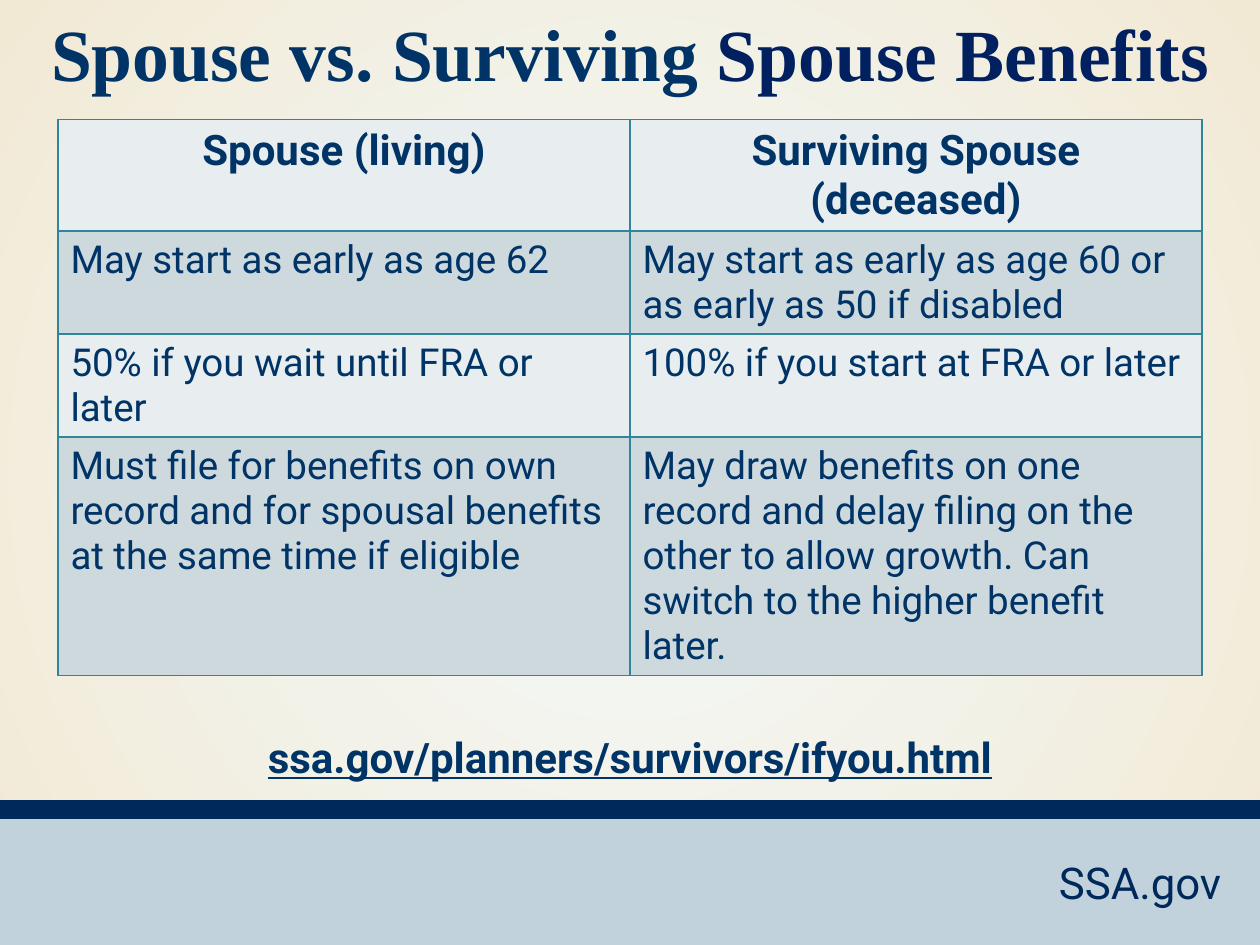
from dataclasses import dataclass

from lxml.etree import SubElement
from pptx import Presentation
from pptx.dml.color import RGBColor
from pptx.enum.shapes import MSO_SHAPE
from pptx.enum.text import MSO_ANCHOR, PP_ALIGN
from pptx.oxml.ns import qn
from pptx.util import Inches, Pt

NAVY = "00295B"
BLUE = "003366"
BORDER = "31859B"
ROW_FILLS = ("E8EDEF", "CED9DE")
HEADER_FORMAT = {"name": "Roboto", "size": Pt(24), "bold": True}
BODY_FORMAT = {"name": "Roboto", "size": Pt(22), "bold": False}
TITLE_FORMAT = {"name": "Times New Roman", "size": Pt(42), "bold": True}


@dataclass
class Box:
    left: float
    top: float
    width: float
    height: float

    def lengths(self) -> tuple:
        return tuple(Inches(value) for value in (self.left, self.top, self.width, self.height))


@dataclass
class Band:
    box: Box
    color: str


@dataclass
class Label:
    box: Box
    text: str
    color: str
    alignment: PP_ALIGN
    font_format: dict


@dataclass
class Row:
    height: float
    texts: tuple


BANDS = (
    Band(Box(0, 6.45, 10, 1.05), "C1D2DC"),
    Band(Box(0, 6.35, 10, 0.15), NAVY),
)
LABELS = (
    Label(Box(6.72, 6.74, 3.07, 0.52), "SSA.gov", NAVY, PP_ALIGN.RIGHT,
          {"name": "Roboto", "size": Pt(25)}),
    Label(Box(0, 5.76, 10, 0.5), "ssa.gov/planners/survivors/ifyou.html", BLUE, PP_ALIGN.CENTER,
          HEADER_FORMAT | {"underline": True}),
)
TITLE_RUNS = (("Spouse vs. Surviving ", BLUE), ("Spouse Benefits", "002060"))
TABLE_BOX = Box(0.46, 0.95, 9.08, 4.2)
ROWS = (
    Row(0.84, ("Spouse (living)", "Surviving Spouse (deceased)")),
    Row(0.78, ("May start as early as age 62",
               "May start as early as age 60 or as early as 50 if disabled")),
    Row(0.78, ("50% if you wait until FRA or later", "100% if you start at FRA or later")),
    Row(1.8, ("Must file for benefits on own record and for spousal benefits "
              "at the same time if eligible",
              "May draw benefits on one record and delay filing on the other to allow growth. "
              "Can switch to the higher benefit later.")),
)


def rgb(color: str) -> RGBColor:
    return RGBColor.from_string(color)


def add_run(paragraph, text: str, color: str, font_format: dict) -> None:
    run = paragraph.add_run()
    run.text = text
    run.font.color.rgb = rgb(color)
    for name, value in font_format.items():
        setattr(run.font, name, value)


def set_background(slide) -> None:
    fill = slide.background.fill
    fill.gradient()
    for stop, position, color in zip(fill.gradient_stops, (0, 1), ("F3FAFB", "F2E9D5")):
        stop.position = position
        stop.color.rgb = rgb(color)
    gradient = next(slide.background._cSld.iter(qn("a:gradFill")))
    gradient.remove(gradient.find(qn("a:lin")))
    circle = SubElement(gradient, qn("a:path"), {"path": "circle"})
    SubElement(circle, qn("a:fillToRect"), dict.fromkeys("ltrb", "50000"))


def add_band(slide, band: Band) -> None:
    shape = slide.shapes.add_shape(MSO_SHAPE.RECTANGLE, *band.box.lengths())
    shape.shadow.inherit = False
    shape.fill.solid()
    shape.fill.fore_color.rgb = rgb(band.color)
    shape.line.fill.background()


def add_label(slide, label: Label) -> None:
    frame = slide.shapes.add_textbox(*label.box.lengths()).text_frame
    frame.word_wrap = True
    paragraph = frame.paragraphs[0]
    paragraph.alignment = label.alignment
    add_run(paragraph, label.text, label.color, label.font_format)


def set_title(slide) -> None:
    title = slide.shapes.title
    title.left, title.top, title.width, title.height = Box(0, 0, 10, 0.82).lengths()
    title.text_frame.vertical_anchor = MSO_ANCHOR.MIDDLE
    paragraph = title.text_frame.paragraphs[0]
    paragraph.alignment = PP_ALIGN.CENTER
    for text, color in TITLE_RUNS:
        add_run(paragraph, text, color, TITLE_FORMAT)


def set_borders(cell) -> None:
    properties = cell._tc.get_or_add_tcPr()
    for index, side in enumerate("LRTB"):
        line = SubElement(properties, qn(f"a:ln{side}"), {"w": str(Pt(1))})
        fill = SubElement(line, qn("a:solidFill"))
        SubElement(fill, qn("a:srgbClr"), {"val": BORDER})
        properties.insert(index, line)


def add_benefits_table(slide) -> None:
    table = slide.shapes.add_table(len(ROWS), 2, *TABLE_BOX.lengths()).table
    for row_index, row in enumerate(ROWS):
        table.rows[row_index].height = Inches(row.height)
        is_header = row_index == 0
        for column_index, text in enumerate(row.texts):
            cell = table.cell(row_index, column_index)
            cell.fill.solid()
            cell.fill.fore_color.rgb = rgb(ROW_FILLS[row_index % 2])
            set_borders(cell)
            paragraph = cell.text_frame.paragraphs[0]
            paragraph.alignment = PP_ALIGN.CENTER if is_header else PP_ALIGN.LEFT
            add_run(paragraph, text, BLUE, HEADER_FORMAT if is_header else BODY_FORMAT)


def main() -> None:
    presentation = Presentation()
    presentation.slide_width = Inches(10)
    presentation.slide_height = Inches(7.5)
    slide = presentation.slides.add_slide(presentation.slide_layouts[5])
    set_background(slide)
    for band in BANDS:
        add_band(slide, band)
    set_title(slide)
    add_benefits_table(slide)
    for label in LABELS:
        add_label(slide, label)
    presentation.save("out.pptx")


if __name__ == "__main__":
    main()
